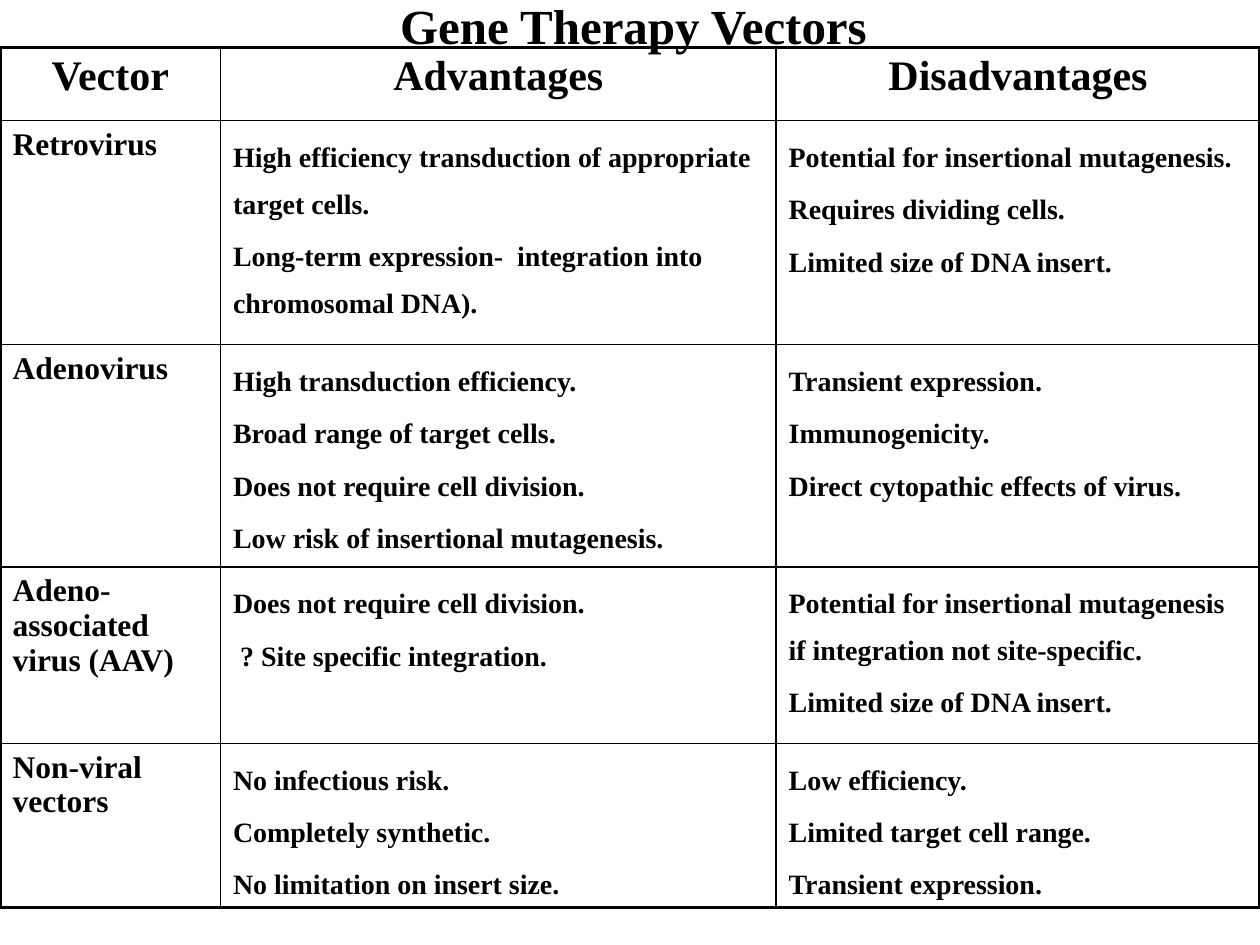
from lxml import etree
from pptx import Presentation
from pptx import util as u
from pptx.dml import color
from pptx.enum import text
from pptx.oxml import ns

THEME = {
    "font": "Times New Roman",
    "ink": "000000",
    "title": 28, "head": 24, "label": 18, "body": 16,
    "inner": 1, "outer": 2.25,
}
COLS = [126, 317.5, 276.5]
ROWS = [42, 128, 127, 101, 80]
HEADERS = ["Vector", "Advantages", "Disadvantages"]
VECTORS = [
    ("Retrovirus",
     ["High efficiency transduction of appropriate target cells.",
      "Long-term expression-  integration into chromosomal DNA)."],
     ["Potential for insertional mutagenesis.", "Requires dividing cells.",
      "Limited size of DNA insert."]),
    ("Adenovirus",
     ["High transduction efficiency.", "Broad range of target cells.",
      "Does not require cell division.", "Low risk of insertional mutagenesis."],
     ["Transient expression.", "Immunogenicity.",
      "Direct cytopathic effects of virus."]),
    ("Adeno-associated virus (AAV)",
     ["Does not require cell division.", " ? Site specific integration."],
     ["Potential for insertional mutagenesis if integration not site-specific.",
      "Limited size of DNA insert."]),
    ("Non-viral vectors",
     ["No infectious risk.", "Completely synthetic.",
      "No limitation on insert size."],
     ["Low efficiency.", "Limited target cell range.", "Transient expression."]),
]


def write(tf, lines, size, **layout):
    """Fill a text frame with one bold paragraph per line."""
    for i, line in enumerate(lines):
        p = tf.paragraphs[0] if i == 0 else tf.add_paragraph()
        for name, value in layout.items():
            setattr(p, name, value)
        r = p.add_run()
        r.text = line
        fmt = {"name": THEME["font"], "size": u.Pt(size), "bold": True}
        for name, value in fmt.items():
            setattr(r.font, name, value)
        r.font.color.rgb = color.RGBColor.from_string(THEME["ink"])


def set_borders(cell, widths):
    """Draw the cell's left, right, top and bottom borders."""
    tcPr = cell._tc.get_or_add_tcPr()
    for i, (side, width) in enumerate(zip("LRTB", widths)):
        ln = etree.Element(ns.qn(f"a:ln{side}"), w=str(int(u.Pt(width))))
        fill = etree.SubElement(ln, ns.qn("a:solidFill"))
        etree.SubElement(fill, ns.qn("a:srgbClr"), val=THEME["ink"])
        tcPr.insert(i, ln)


prs = Presentation()
prs.slide_width, prs.slide_height = u.Pt(720), u.Pt(540)
s = prs.slides.add_slide(prs.slide_layouts[5])

# Title
sp = s.shapes.title
box = {"left": 90, "top": 0.75, "width": 544, "height": 26.5}
for name, value in box.items():
    setattr(sp, name, u.Pt(value))
tf = sp.text_frame
tf.auto_size = text.MSO_AUTO_SIZE.NONE
tf.vertical_anchor = text.MSO_ANCHOR.MIDDLE
write(tf, ["Gene Therapy Vectors"], THEME["title"], alignment=text.PP_ALIGN.CENTER)

# Table grid
table = s.shapes.add_table(len(ROWS), len(COLS), u.Pt(0), u.Pt(27),
                           u.Pt(sum(COLS)), u.Pt(sum(ROWS))).table
table.first_row = table.horz_banding = False
for col, width in zip(table.columns, COLS):
    col.width = u.Pt(width)
for row, height in zip(table.rows, ROWS):
    row.height = u.Pt(height)

# Cell fills and borders, heavier around the outside
last_row, last_col = len(ROWS) - 1, len(COLS) - 1
for i in range(len(ROWS)):
    for j in range(len(COLS)):
        cell = table.cell(i, j)
        cell.fill.background()
        outside = (j == 0, j == last_col, i == 0, i == last_row)
        set_borders(cell, [THEME["outer" if edge else "inner"] for edge in outside])

# Header row
for j, header in enumerate(HEADERS):
    write(table.cell(0, j).text_frame, [header], THEME["head"],
          alignment=text.PP_ALIGN.CENTER, space_before=u.Pt(4.8))

# One row per vector
for i, (vector, *points) in enumerate(VECTORS, 1):
    write(table.cell(i, 0).text_frame, [vector], THEME["label"],
          space_before=u.Pt(3.6 if i == 1 else 9))
    for j, lines in enumerate(points, 1):
        write(table.cell(i, j).text_frame, lines, THEME["body"],
              line_spacing=1.5, space_before=u.Pt(3.2))

prs.save("out.pptx")
